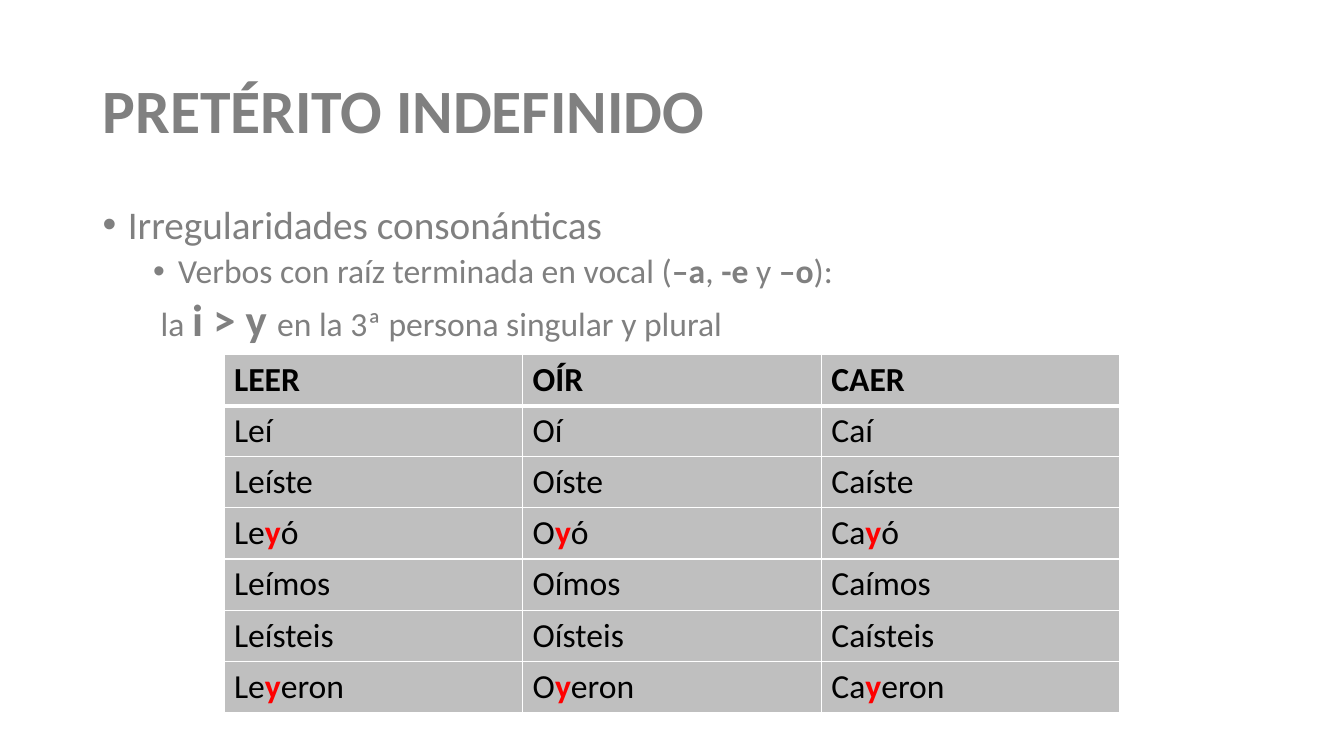
from lxml import etree
from pptx import Presentation, util as u
from pptx.dml import color
from pptx.enum import text as t
from pptx.oxml import ns

WIDTH, HEIGHT = 13.33, 7.5
FONT = "Calibri"
GREY, BLACK, RED, SILVER, WHITE = "808080", "000000", "FF0000", "BFBFBF", "FFFFFF"

INFINITIVES = ["LEER", "OÍR", "CAER"]
STEMS = ["Le", "O", "Ca"]
ENDINGS = ["í", "íste", "yó", "ímos", "ísteis", "yeron"]


def rgb(value):
    return color.RGBColor.from_string(value)


def share(left, top, width, height):
    return (u.Inches(WIDTH * left), u.Inches(HEIGHT * top),
            u.Inches(WIDTH * width), u.Inches(HEIGHT * height))


def write(paragraph, wording, size=24, bold=False, ink=GREY):
    run = paragraph.add_run()
    run.text = wording
    run.font.name = FONT
    run.font.size = u.Pt(size)
    run.font.bold = bold
    run.font.color.rgb = rgb(ink)


def text_area(slide, box, anchor):
    frame = slide.shapes.add_textbox(*box).text_frame
    frame.word_wrap = True
    frame.auto_size = t.MSO_AUTO_SIZE.NONE
    frame.vertical_anchor = anchor
    return frame


def lay_out(paragraph, level=0, margin=0, hanging=0, before=0):
    paragraph.level = level
    paragraph.line_spacing = 0.9
    paragraph.space_before = u.Pt(before)
    properties = paragraph._p.get_or_add_pPr()
    properties.set("marL", str(u.Inches(margin)))
    properties.set("indent", str(-u.Inches(hanging)))
    if hanging:
        etree.SubElement(properties, ns.qn("a:buFont"), typeface="Arial")
        etree.SubElement(properties, ns.qn("a:buChar"), char="•")
    else:
        etree.SubElement(properties, ns.qn("a:buNone"))


def add_heading(slide):
    frame = text_area(slide, share(0.069, 0.053, 0.863, 0.193), t.MSO_ANCHOR.MIDDLE)
    heading = frame.paragraphs[0]
    lay_out(heading)
    write(heading, "PRETÉRITO INDEFINIDO", size=44, bold=True)


def add_rule(slide):
    frame = text_area(slide, share(0.069, 0.265, 0.863, 0.735), t.MSO_ANCHOR.TOP)
    topic = frame.paragraphs[0]
    lay_out(topic, margin=0.25, hanging=0.25, before=10)
    write(topic, "Irregularidades consonánticas", size=28)

    verbs = frame.add_paragraph()
    lay_out(verbs, level=1, margin=0.75, hanging=0.25, before=5)
    pieces = ["Verbos con raíz terminada en vocal (", "–a", ", ", "-e ", "y ", "–o", "):"]
    for index, piece in enumerate(pieces):
        write(verbs, piece, bold=index % 2 == 1)

    change = frame.add_paragraph()
    lay_out(change, level=1, margin=0.5, before=5)
    write(change, " la ")
    write(change, "i > y ", size=32, bold=True)
    write(change, "en la 3ª persona singular y plural")


def style_cell(cell, row):
    cell.fill.solid()
    cell.fill.fore_color.rgb = rgb(SILVER)
    widths = {"L": 1, "R": 1, "T": 3 if row == 1 else 1, "B": 3 if row == 0 else 1}
    properties = cell._tc.get_or_add_tcPr()
    for index, (side, width) in enumerate(widths.items()):
        border = etree.Element(ns.qn(f"a:ln{side}"), w=str(u.Pt(width)))
        paint = etree.SubElement(border, ns.qn("a:solidFill"))
        etree.SubElement(paint, ns.qn("a:srgbClr"), val=WHITE)
        properties.insert(index, border)


def write_form(paragraph, stem, ending):
    write(paragraph, stem if ending[0] == "y" else stem + ending, ink=BLACK)
    if ending[0] == "y":
        write(paragraph, "y", bold=True, ink=RED)
        write(paragraph, ending[1:], ink=BLACK)


def add_conjugation(slide):
    rows = len(ENDINGS) + 1
    box = share(1 / 6, 0.469, 2 / 3, 0.467)
    table = slide.shapes.add_table(rows, len(STEMS), *box).table
    table.horz_banding = False
    for column, (infinitive, stem) in enumerate(zip(INFINITIVES, STEMS)):
        for row in range(rows):
            cell = table.cell(row, column)
            style_cell(cell, row)
            paragraph = cell.text_frame.paragraphs[0]
            if row == 0:
                write(paragraph, infinitive, bold=True, ink=BLACK)
            else:
                write_form(paragraph, stem, ENDINGS[row - 1])


def main():
    deck = Presentation()
    deck.slide_width, deck.slide_height = u.Inches(WIDTH), u.Inches(HEIGHT)
    slide = deck.slides.add_slide(deck.slide_layouts[6])
    add_heading(slide)
    add_rule(slide)
    add_conjugation(slide)
    deck.save("out.pptx")


if __name__ == "__main__":
    main()
